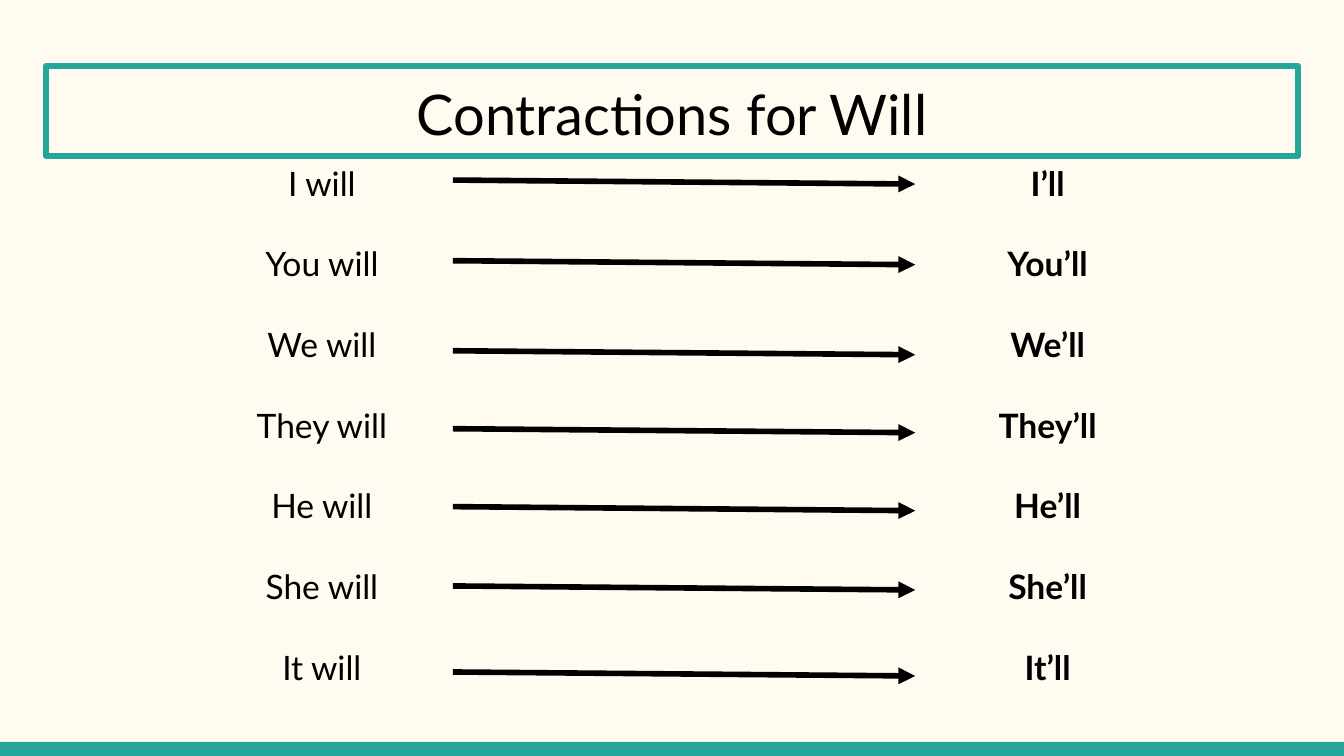
from lxml import etree
from pptx import Presentation
from pptx.dml.color import RGBColor
from pptx.enum.shapes import MSO_CONNECTOR, MSO_SHAPE
from pptx.enum.text import MSO_ANCHOR, MSO_AUTO_SIZE, PP_ALIGN
from pptx.oxml.ns import qn
from pptx.util import Inches, Pt

STRAIGHT = MSO_CONNECTOR.STRAIGHT
RECTANGLE = MSO_SHAPE.RECTANGLE
TOP = MSO_ANCHOR.TOP
NO_AUTOFIT = MSO_AUTO_SIZE.NONE
CENTER = PP_ALIGN.CENTER

CREAM = RGBColor(0xFF, 0xFB, 0xF0)
TEAL = RGBColor(0x26, 0xA6, 0x9A)
BLACK = RGBColor(0, 0, 0)

CONTRACTIONS = [
    ("I will", "I’ll", 1.34),
    ("You will", "You’ll", 1.94),
    ("We will", "We’ll", 2.61),
    ("They will", "They’ll", 3.19),
    ("He will", "He’ll", 3.77),
    ("She will", "She’ll", 4.36),
    ("It will", "It’ll", 5),
]
full_forms, short_forms, arrow_tops = zip(*CONTRACTIONS)


def fill_placeholder(shape, box, lines, size, bold=False):
    shape.left, shape.top, shape.width, shape.height = map(Inches, box)
    frame = shape.text_frame
    frame.text = "\n".join(lines)
    frame.word_wrap = True
    frame.auto_size = NO_AUTOFIT
    frame.vertical_anchor = TOP
    frame.margin_left = frame.margin_right = Inches(0.1)
    frame.margin_top = frame.margin_bottom = Inches(0.1)
    for paragraph in frame.paragraphs:
        paragraph.alignment = CENTER
        paragraph.space_before = Pt(0)
        paragraph.font.name = "Lato"
        paragraph.font.size = Pt(size)
        paragraph.font.bold = bold
        paragraph.font.color.rgb = BLACK


presentation = Presentation()
presentation.slide_width = Inches(10)
presentation.slide_height = Inches(10) * 9 // 16
slide = presentation.slides.add_slide(presentation.slide_layouts.get_by_name("Two Content"))
slide.background.fill.solid()
slide.background.fill.fore_color.rgb = CREAM

footer_bar = slide.shapes.add_shape(RECTANGLE, 0, Inches(5.52), Inches(10), Inches(0.11))
footer_bar.height = presentation.slide_height - footer_bar.top
footer_bar.shadow.inherit = False
footer_bar.fill.solid()
footer_bar.fill.fore_color.rgb = TEAL
footer_bar.line.fill.background()

title, full_column, short_column = slide.placeholders
fill_placeholder(title, (0.34, 0.49, 9.32, 0.67), ["Contractions for Will"], 30)
title.line.color.rgb = TEAL
title.line.width = Pt(3)

for column, left, words, bold in [
    (full_column, 1.45, full_forms, False),
    (short_column, 6.85, short_forms, True),
]:
    fill_placeholder(column, (left, 1.11, 1.89, 4.15), words, 18, bold)
    for paragraph in column.text_frame.paragraphs:
        paragraph.space_after = Pt(21.6)
        properties = paragraph._p.get_or_add_pPr()
        properties.set("marL", "0")
        properties.set("indent", "0")
        bullet_none = etree.Element(qn("a:buNone"))
        properties.find(qn("a:spcAft")).addnext(bullet_none)

for top in arrow_tops:
    arrow = slide.shapes.add_connector(
        STRAIGHT, Inches(3.37), Inches(top), Inches(6.81), Inches(top + 0.03)
    )
    arrow.line.color.rgb = BLACK
    arrow.line.width = Pt(3)
    etree.SubElement(arrow.line._get_or_add_ln(), qn("a:tailEnd"), type="triangle")
    etree.SubElement(arrow._element.spPr, qn("a:effectLst"))

presentation.save("out.pptx")
